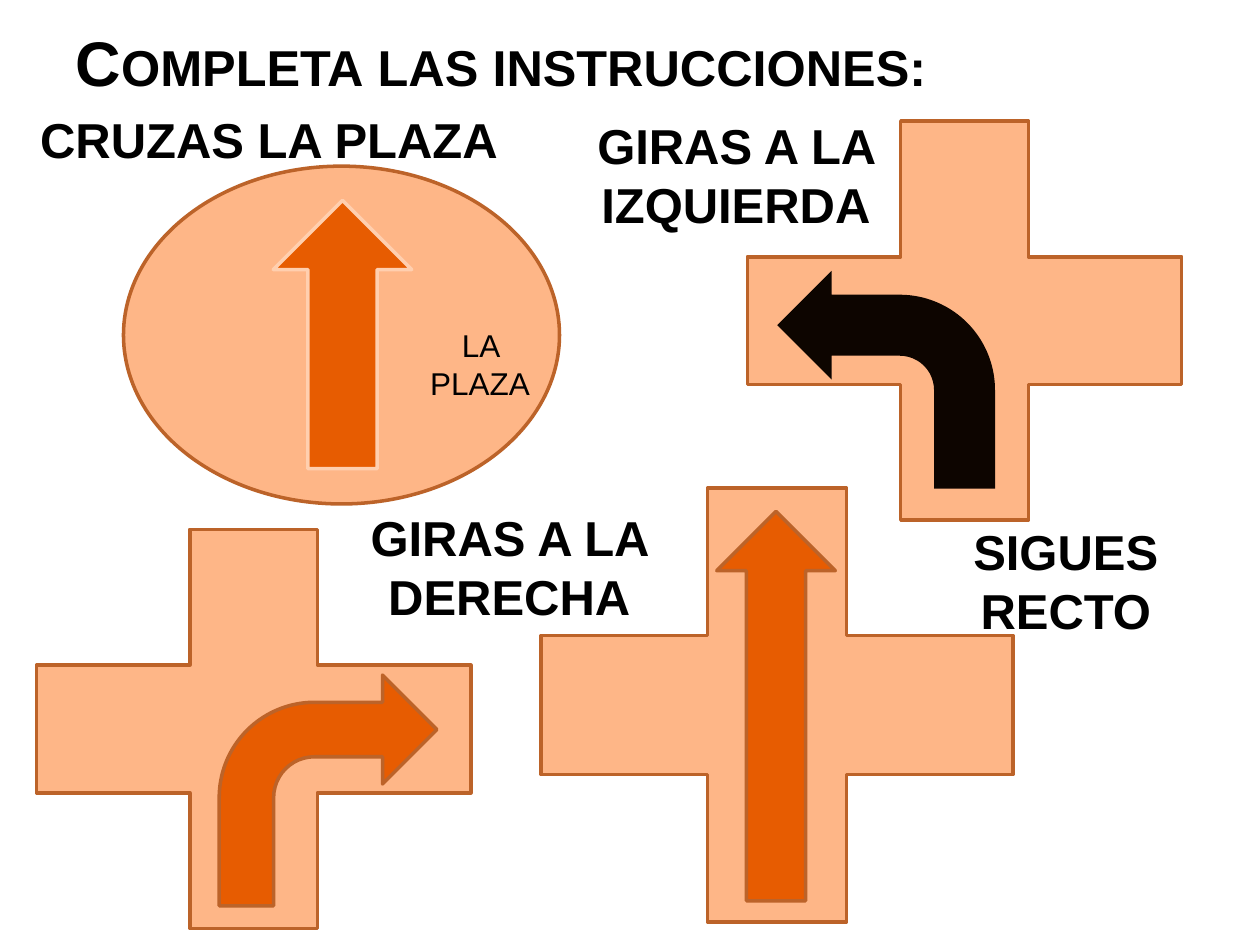
from dataclasses import dataclass
from typing import Optional

from pptx import Presentation
from pptx.dml.color import RGBColor
from pptx.enum.shapes import MSO_SHAPE
from pptx.enum.text import MSO_ANCHOR, MSO_AUTO_SIZE, PP_ALIGN
from pptx.oxml.ns import qn
from pptx.util import Cm, Pt

ROAD, ARROW, DARK = "FEB687", "E75C01", "0D0500"
OUTLINE, PALE, BLACK = "BC6329", "FFCFAF", "000000"


@dataclass
class Box:
    left: float
    top: float
    width: float
    height: float

    def lengths(self) -> list:
        return [Cm(value) for value in (self.left, self.top, self.width, self.height)]


@dataclass
class Figure:
    kind: MSO_SHAPE
    box: Box
    fill: str
    line: Optional[str] = OUTLINE
    flipped: bool = False
    shaft: Optional[float] = None


@dataclass
class Label:
    text: str
    box: Box
    size: int = 28
    bold: bool = True
    align: PP_ALIGN = PP_ALIGN.CENTER


def color(value: str) -> RGBColor:
    return RGBColor.from_string(value)


def draw_figure(slide, figure: Figure) -> None:
    shape = slide.shapes.add_shape(figure.kind, *figure.box.lengths())
    shape.shadow.inherit = False
    shape.fill.solid()
    shape.fill.fore_color.rgb = color(figure.fill)
    if figure.line:
        shape.line.color.rgb = color(figure.line)
        shape.line.width = Pt(2)
    else:
        shape.line.fill.background()
    if figure.shaft:
        shape.adjustments[0] = figure.shaft
    if figure.flipped:
        shape._element.spPr.find(qn("a:xfrm")).set("flipH", "1")


def write_text(shape, label: Label, frame_format: dict):
    frame = shape.text_frame
    for name, value in frame_format.items():
        setattr(frame, name, value)
    paragraph = frame.paragraphs[0]
    paragraph.alignment = label.align
    run = paragraph.add_run()
    run.text = label.text
    font_format = {"name": "Arial", "size": Pt(label.size), "bold": label.bold}
    for name, value in font_format.items():
        setattr(run.font, name, value)
    run.font.color.rgb = color(BLACK)
    return run


def draw_title(slide, label: Label) -> None:
    title = slide.shapes.title
    title.left, title.top, title.width, title.height = label.box.lengths()
    run = write_text(title, label, {
        "word_wrap": True,
        "auto_size": MSO_AUTO_SIZE.NONE,
        "vertical_anchor": MSO_ANCHOR.BOTTOM,
    })
    run.font._element.set("cap", "small")


def draw_label(slide, label: Label) -> None:
    shape = slide.shapes.add_textbox(*label.box.lengths())
    write_text(shape, label, {
        "word_wrap": True,
        "auto_size": MSO_AUTO_SIZE.SHAPE_TO_FIT_TEXT,
    })


TITLE = Label("Completa las instrucciones:", Box(1.27, 0.76, 20.75, 1.37),
              size=36, align=PP_ALIGN.LEFT)

FIGURES = [
    # Crossroads for turning left and going straight on
    Figure(MSO_SHAPE.MATH_PLUS, Box(13.49, 0.99, 11.91, 10.95), ROAD),
    Figure(MSO_SHAPE.MATH_PLUS, Box(9.19, 8.26, 12.95, 11.91), ROAD),
    # Square with its arrow
    Figure(MSO_SHAPE.FLOWCHART_CONNECTOR, Box(2.49, 3.35, 8.79, 6.81), ROAD),
    Figure(MSO_SHAPE.UP_ARROW, Box(5.51, 4.04, 2.79, 5.41), ARROW, PALE),
    # Arrows to the left and straight on
    Figure(MSO_SHAPE.BENT_ARROW, Box(15.67, 5.46, 4.39, 4.39), DARK, None,
           flipped=True, shaft=0.28),
    Figure(MSO_SHAPE.UP_ARROW, Box(14.45, 10.31, 2.39, 7.85), ARROW),
    # Crossroads for turning right
    Figure(MSO_SHAPE.MATH_PLUS, Box(-0.84, 9.22, 11.91, 10.95), ROAD),
    Figure(MSO_SHAPE.BENT_ARROW, Box(4.42, 13.61, 4.39, 4.65), ARROW),
]

LABELS = [
    Label("CRUZAS LA PLAZA", Box(0.56, 2.08, 10.01, 1.45), align=PP_ALIGN.LEFT),
    Label("GIRAS A LA IZQUIERDA", Box(11.33, 2.21, 7.01, 2.64)),
    Label("GIRAS A LA DERECHA", Box(6.81, 10.11, 6.91, 2.64)),
    Label("SIGUES RECTO", Box(18.69, 10.39, 5.59, 2.64)),
    Label("LA PLAZA", Box(8.31, 6.45, 2.74, 1.8), size=18, bold=False),
]


def main() -> None:
    presentation = Presentation()
    presentation.slide_width, presentation.slide_height = Cm(25.4), Cm(19.05)
    slide = presentation.slides.add_slide(presentation.slide_layouts[5])
    draw_title(slide, TITLE)
    for figure in FIGURES:
        draw_figure(slide, figure)
    for label in LABELS:
        draw_label(slide, label)
    presentation.save("out.pptx")


if __name__ == "__main__":
    main()
